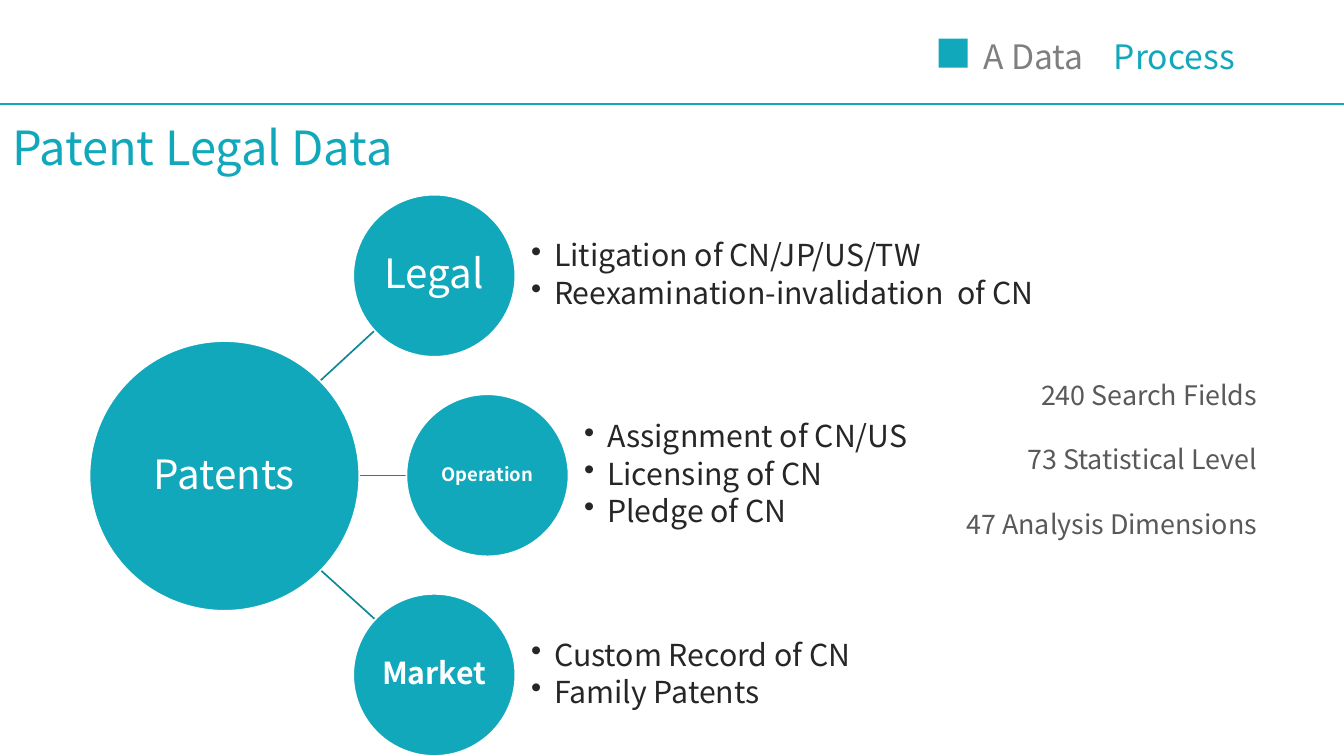
"""Build the Patent Legal Data slide with its hub-and-branch diagram."""
from lxml.etree import SubElement
from pptx import Presentation
from pptx.dml.color import RGBColor
from pptx.enum.shapes import MSO_CONNECTOR as Connector, MSO_SHAPE as Shape
from pptx.enum.text import MSO_ANCHOR as Anchor, PP_ALIGN as Align
from pptx.oxml.ns import qn
from pptx.util import Inches, Pt

FONT = "Noto Sans CJK SC"
COLORS = {
    "teal": "12A8BC", "dark teal": "0E8797", "white": "FFFFFF",
    "ink": "262626", "gray": "7F7F7F", "slate": "595959",
}


def add_span(para, text, size, color, bold=False):
    span = para.add_run()
    span.text = text
    span.font.name = FONT
    span.font.size = Pt(size)
    span.font.bold = bold
    span.font.color.rgb = RGBColor.from_string(COLORS[color])


def add_line(page, start, end, color):
    line = page.shapes.add_connector(Connector.STRAIGHT, *map(Inches, start + end))
    line.line.color.rgb = RGBColor.from_string(COLORS[color])
    line.line.width = Pt(1)
    SubElement(line._element.spPr, qn("a:effectLst"))


deck = Presentation()
deck.slide_width, deck.slide_height = Inches(11.11), Inches(6.25)
page = deck.slides.add_slide(deck.slide_layouts[5])

title = page.shapes.title
title.left, title.top = Inches(0), Inches(0.93)
title.width, title.height = Inches(9.57), Inches(0.57)
title.text_frame.vertical_anchor = Anchor.TOP
title_para = title.text_frame.paragraphs[0]
title_para.alignment = Align.LEFT
add_span(title_para, "Patent Legal Data", 28, "teal")

add_line(page, (0, 0.86), (11.11, 0.86), "teal")
marker = page.shapes.add_shape(
    Shape.RECTANGLE, Inches(7.76), Inches(0.32), Inches(0.24), Inches(0.24))
marker.shadow.inherit = False
marker.fill.solid()
marker.fill.fore_color.rgb = RGBColor.from_string(COLORS["teal"])
marker.line.fill.background()

header = page.shapes.add_textbox(Inches(8.03), Inches(0.25), Inches(2.59), Inches(0.44))
header.text_frame.word_wrap = True
header_para = header.text_frame.paragraphs[0]
tabs = SubElement(header_para._p.get_or_add_pPr(), qn("a:tabLst"))
SubElement(tabs, qn("a:tab"), pos=str(Inches(1.08)), algn="l")
add_span(header_para, "A Data\t", 20, "gray")
add_span(header_para, "Process", 20, "teal")

hub_y = 3.93
for start_rise, end_x, end_rise in [(-0.72, 3.1, -1.2), (0, 3.36, 0), (0.72, 3.1, 1.19)]:
    add_line(page, (2.58, hub_y + start_rise), (end_x, hub_y + end_rise), "dark teal")

circles = [
    ("Patents", 0.74, 2.82, 2.23, 24, False),
    ("Legal", 2.92, 1.61, 1.34, 24, False),
    ("Operation", 3.36, 3.26, 1.34, 11, True),
    ("Market", 2.92, 4.91, 1.34, 18, True),
]
for name, left, top, size, font_size, bold in circles:
    circle = page.shapes.add_shape(
        Shape.OVAL, Inches(left), Inches(top), Inches(size), Inches(size))
    circle.shadow.inherit = False
    circle.fill.solid()
    circle.fill.fore_color.rgb = RGBColor.from_string(COLORS["teal"])
    circle.line.color.rgb = RGBColor.from_string(COLORS["white"])
    circle.line.width = Pt(1)
    frame = circle.text_frame
    frame.margin_left = frame.margin_right = frame.margin_top = frame.margin_bottom = 0
    frame.vertical_anchor = Anchor.MIDDLE
    para = frame.paragraphs[0]
    para.alignment = Align.CENTER
    para.line_spacing = 0.9
    add_span(para, name, font_size, "white", bold)

bullet_lists = [
    (4.39, 1.61, 4.79, ["Litigation of CN/JP/US/TW", "Reexamination-invalidation  of CN"]),
    (4.83, 3.26, 3.34, ["Assignment of CN/US", "Licensing of CN", "Pledge of CN"]),
    (4.39, 4.91, 2.84, ["Custom Record of CN", "Family Patents"]),
]
for left, top, width, items in bullet_lists:
    box = page.shapes.add_textbox(Inches(left), Inches(top), Inches(width), Inches(1.34))
    frame = box.text_frame
    frame.word_wrap = True
    frame.margin_left = frame.margin_right = frame.margin_top = frame.margin_bottom = 0
    frame.vertical_anchor = Anchor.MIDDLE
    for index, item in enumerate(items):
        para = frame.add_paragraph() if index else frame.paragraphs[0]
        layout = para._p.get_or_add_pPr()
        layout.set("marL", str(Inches(0.19)))
        layout.set("indent", str(-Inches(0.19)))
        SubElement(layout, qn("a:buChar"), char="•")
        para.line_spacing = 0.9
        para.space_after = Pt(2.7)
        add_span(para, item, 18, "ink")

figures = page.shapes.add_textbox(Inches(7.81), Inches(3.08), Inches(2.68), Inches(1.45))
figures.text_frame.word_wrap = True
for index, item in enumerate(
        ["240 Search Fields", "73 Statistical Level", "47 Analysis Dimensions"]):
    para = figures.text_frame.add_paragraph() if index else figures.text_frame.paragraphs[0]
    para.alignment = Align.RIGHT
    para.space_before = Pt(19.2 if index else 0)
    add_span(para, item, 16, "slate")

deck.save("out.pptx")
